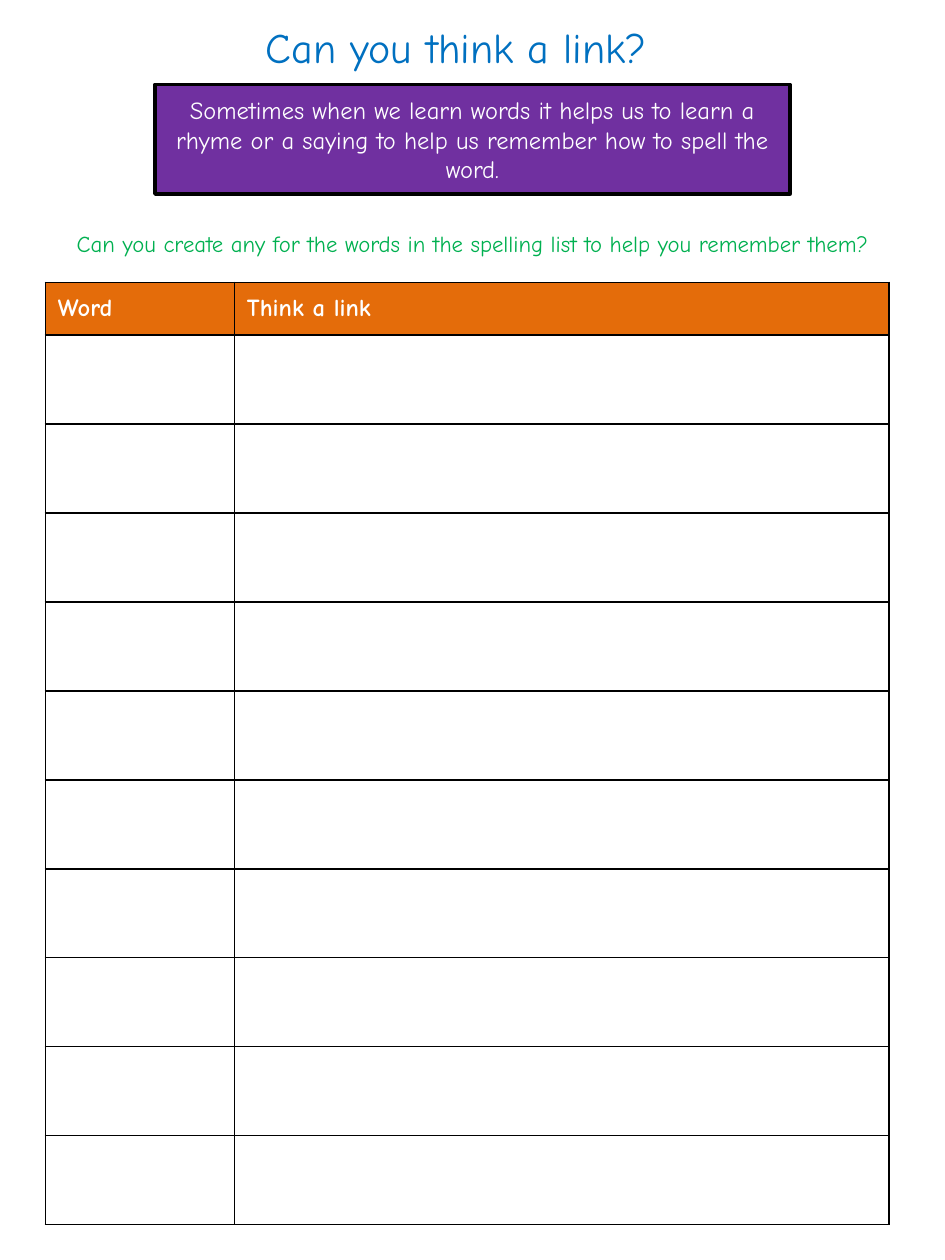
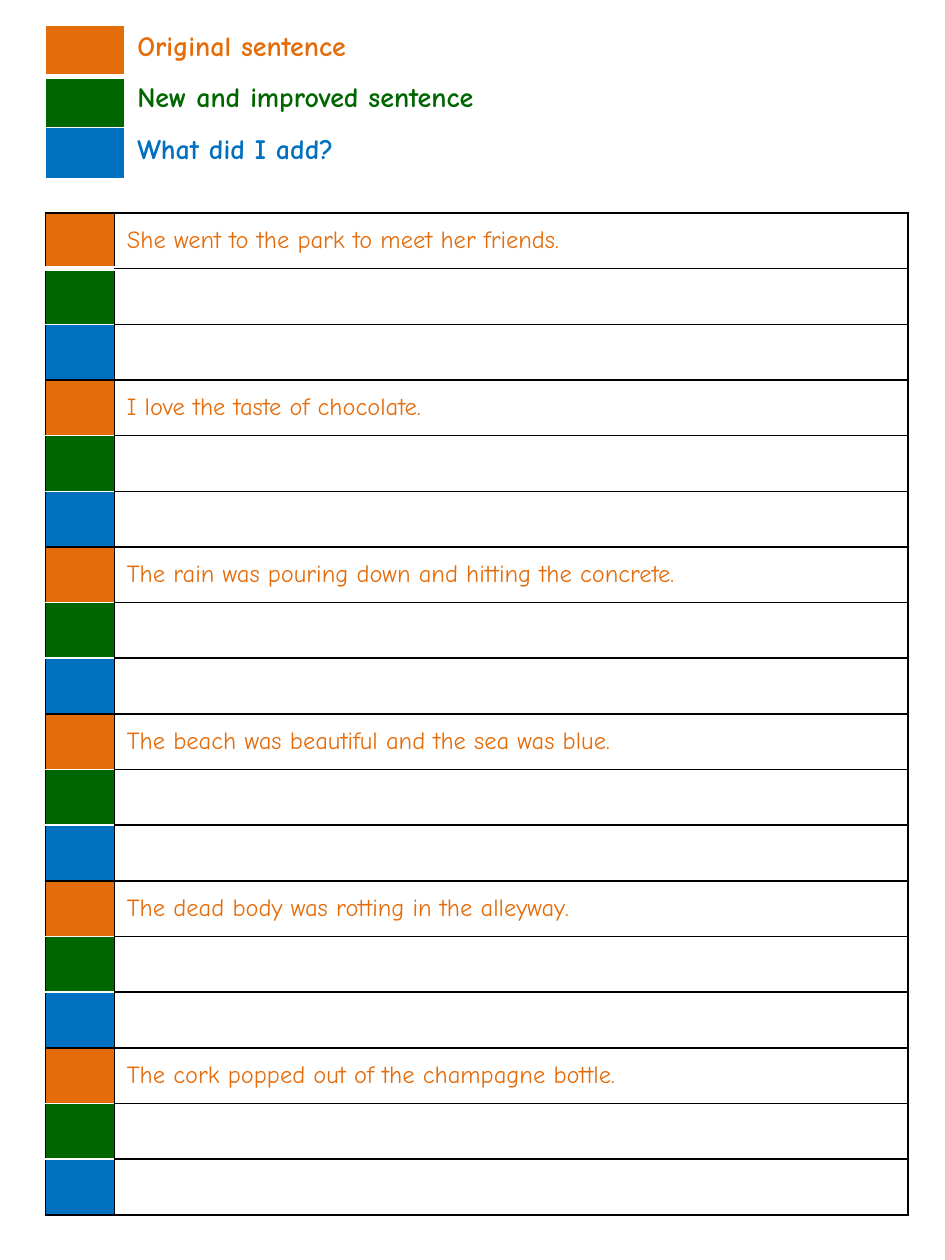
from dataclasses import dataclass

from lxml import etree
from pptx import Presentation
from pptx.dml.color import RGBColor
from pptx.enum.shapes import MSO_SHAPE
from pptx.enum.text import MSO_ANCHOR, PP_ALIGN
from pptx.oxml.ns import qn
from pptx.util import Inches, Pt

RECTANGLE = MSO_SHAPE.RECTANGLE
TOP, MIDDLE = MSO_ANCHOR.TOP, MSO_ANCHOR.MIDDLE
LEFT, CENTER = PP_ALIGN.LEFT, PP_ALIGN.CENTER
SLIDE_WIDTH, SLIDE_HEIGHT = Inches(7.5), Inches(10)
BLANK_LAYOUT = 6
MARGIN = 4.8
EDGES = {"left": "a:lnL", "right": "a:lnR", "top": "a:lnT", "bottom": "a:lnB"}


@dataclass(frozen=True)
class Theme:
    """Colours, typeface and type sizes shared by both worksheets."""
    font: str = "Comic Neue"
    black: str = "000000"
    white: str = "FFFFFF"
    orange: str = "E46C0A"
    green: str = "006600"
    blue: str = "0070C0"
    purple: str = "7030A0"
    prompt_green: str = "00B050"
    title: int = 24
    legend: int = 16
    body: int = 14
    prompt: int = 13
    thin: int = 1
    frame: int = 2
    thick: int = 3


THEME = Theme()
LEGEND = [
    ("Original sentence", THEME.orange),
    ("New and improved sentence", THEME.green),
    ("What did I add?", THEME.blue),
]
SENTENCES = [
    "She went to the park to meet her friends.",
    "I love the taste of chocolate.",
    "The rain was pouring down and hitting the concrete.",
    "The beach was beautiful and the sea was blue.",
    "The dead body was rotting in the alleyway.",
    "The cork popped out of the champagne bottle.",
]
LINK_HEADINGS = ["Word", "Think a link"]
LINK_ROWS = 10


def across(percent):
    """Turn a percentage of the slide width into a length."""
    return round(SLIDE_WIDTH * percent / 100)


def down(percent):
    """Turn a percentage of the slide height into a length."""
    return round(SLIDE_HEIGHT * percent / 100)


def area(left, top, width, height):
    """Turn four slide percentages into a position and size."""
    return across(left), down(top), across(width), down(height)


def write(frame, text, size, color, bold=False, align=LEFT):
    """Put one styled line of wording into a text frame."""
    paragraph = frame.paragraphs[0]
    paragraph.alignment = align
    run = paragraph.add_run()
    run.text = text
    for name, value in {"name": THEME.font, "size": Pt(size), "bold": bold}.items():
        setattr(run.font, name, value)
    run.font.color.rgb = RGBColor.from_string(color)


def add_line_of_text(slide, box, text, size, color, align=LEFT):
    """Add free-standing text."""
    frame = slide.shapes.add_textbox(*area(*box)).text_frame
    frame.word_wrap = True
    write(frame, text, size, color, align=align)


def add_banner(slide, box, text):
    """Add the framed explanation."""
    banner = slide.shapes.add_shape(RECTANGLE, *area(*box))
    banner.shadow.inherit = False
    banner.fill.solid()
    banner.fill.fore_color.rgb = RGBColor.from_string(THEME.purple)
    banner.line.color.rgb = RGBColor.from_string(THEME.black)
    banner.line.width = Pt(THEME.frame)
    banner.text_frame.word_wrap = True
    banner.text_frame.vertical_anchor = MIDDLE
    write(banner.text_frame, text, THEME.body, THEME.white, align=CENTER)


def add_grid(slide, top, columns, rows):
    """Add a plain table whose columns and rows are slide percentages."""
    box = area(MARGIN, top, sum(columns), sum(rows))
    grid = slide.shapes.add_table(len(rows), len(columns), *box).table
    grid.first_row = grid.horz_banding = False
    for column, width in zip(grid.columns, columns):
        column.width = across(width)
    for row, height in zip(grid.rows, rows):
        row.height = down(height)
    return grid


def style_cell(cell, fill, border, anchor=MIDDLE, **edges):
    """Fill a cell and rule its edges, with (colour, points) for special ones."""
    cell.vertical_anchor = anchor
    properties = cell._tc.get_or_add_tcPr()
    for edge, tag in EDGES.items():
        color, points = edges.get(edge, (border, THEME.thin))
        rule = etree.SubElement(properties, qn(tag), w=str(Pt(points)))
        paint = etree.SubElement(rule, qn("a:solidFill"))
        etree.SubElement(paint, qn("a:srgbClr"), val=color)
    cell.fill.solid()
    cell.fill.fore_color.rgb = RGBColor.from_string(fill)


def add_link_table(slide):
    """Add the table for words and their memory links."""
    grid = add_grid(slide, 22.4, [20, 69.3], [4.2] + [7.06] * LINK_ROWS)
    for index, row in enumerate(grid.rows):
        for cell in row.cells:
            style_cell(cell, THEME.white if index else THEME.orange, THEME.black)
    for cell, heading in zip(grid.rows[0].cells, LINK_HEADINGS):
        write(cell.text_frame, heading, THEME.body, THEME.white, bold=True)


def add_legend(slide):
    """Add the colour key."""
    grid = add_grid(slide, 2, [8.4, 58.3], [4.07] * len(LEGEND))
    for index, (row, (label, color)) in enumerate(zip(grid.rows, LEGEND)):
        edges = {} if index else {"bottom": (THEME.white, THEME.thick)}
        swatch, caption = row.cells
        style_cell(swatch, color, THEME.white, **edges)
        style_cell(caption, THEME.white, THEME.white, TOP, **edges)
        write(caption.text_frame, label, THEME.legend, color, bold=True)


def add_sentence_table(slide):
    """Add a colour-keyed group of rows for each sentence."""
    steps = len(LEGEND)
    grid = add_grid(slide, 16.9, [7.3, 84], [4.42] * (steps * len(SENTENCES)))
    for index, row in enumerate(grid.rows):
        group, step = divmod(index, steps)
        swatch, answer = row.cells
        edges = {}
        if step > 0:
            edges["top"] = (THEME.white, THEME.thin)
        if step < steps - 1:
            edges["bottom"] = (THEME.white, THEME.thin if index else THEME.thick)
        style_cell(swatch, LEGEND[step][1], THEME.black, **edges)
        style_cell(answer, THEME.white, THEME.black)
        if step == 0:
            write(answer.text_frame, SENTENCES[group], THEME.body, THEME.orange)


def build_link_sheet(slide):
    """Lay out the memory link worksheet."""
    add_line_of_text(slide, (26.8, 1.2, 46.4, 5), "Can you think a link?",
                     THEME.title, THEME.blue)
    add_banner(slide, (16.4, 6.7, 67.2, 8.7),
               "Sometimes when we learn words it helps us to learn a rhyme or "
               "a saying to help us remember how to spell the word.")
    add_line_of_text(slide, (1.9, 17.7, 96.1, 3.2),
                     "Can you create any for the words in the spelling list to "
                     "help you remember them?",
                     THEME.prompt, THEME.prompt_green, CENTER)
    add_link_table(slide)


def build_sentence_sheet(slide):
    """Lay out the sentence improving worksheet."""
    add_legend(slide)
    add_sentence_table(slide)


def main():
    """Build and save both worksheets."""
    deck = Presentation()
    deck.slide_width, deck.slide_height = SLIDE_WIDTH, SLIDE_HEIGHT
    for build in (build_link_sheet, build_sentence_sheet):
        build(deck.slides.add_slide(deck.slide_layouts[BLANK_LAYOUT]))
    deck.save("out.pptx")


if __name__ == "__main__":
    main()
